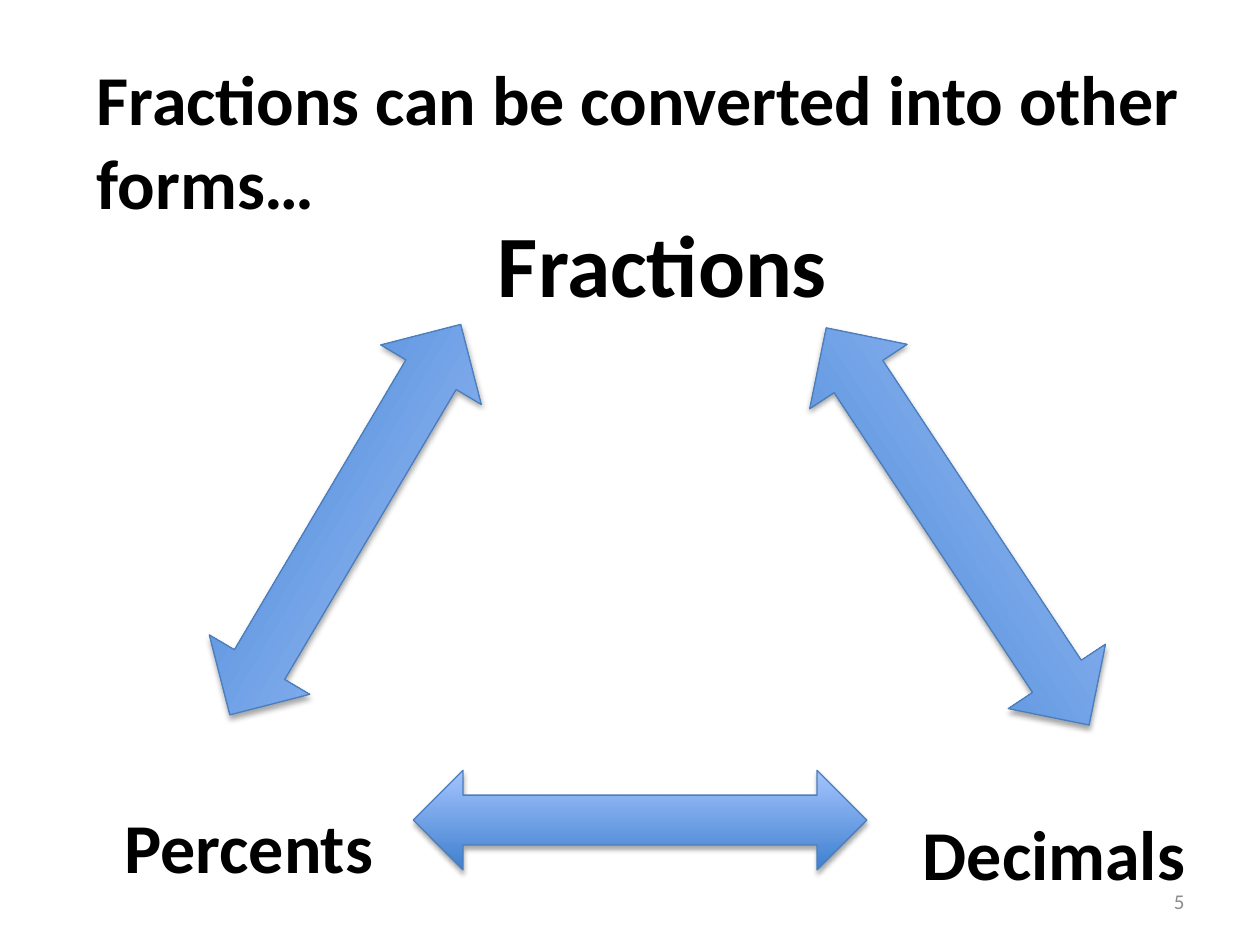
import pptx
import pptx.dml.color
import pptx.enum.shapes
import pptx.enum.text
import pptx.oxml
import pptx.util
from dataclasses import dataclass

ALIGN = pptx.enum.text.PP_ALIGN
ANCHOR = pptx.enum.text.MSO_ANCHOR
A_NS = "http://schemas.openxmlformats.org/drawingml/2006/main"


@dataclass(frozen=True)
class Theme:
    font: str = "Calibri"
    ink: str = "000000"
    muted: str = "8C8C8C"
    arrow_dark: str = "3F80CE"
    arrow_light: str = "A4C4FF"
    arrow_line: str = "4B7EBC"
    top_size: int = 50
    body_size: int = 40
    number_size: int = 12


@dataclass(frozen=True)
class Box:
    """A region measured in grid cells (100 columns by 75 rows)."""
    x: float
    y: float
    w: float
    h: float

    def inner(self, x, y, w, h):
        """A box given as shares of this one."""
        return Box(self.x + x * self.w, self.y + y * self.h, w * self.w, h * self.h)

    def place(self):
        return [pptx.util.Inches(v * CELL) for v in (self.x, self.y, self.w, self.h)]


THEME = Theme()
CELL = 0.1
PAGE = Box(0, 0, 100, 75)


def rgb(value):
    return pptx.dml.color.RGBColor.from_string(value)


def add_text(s, box, text, size=THEME.body_size, color=THEME.ink, bold=True,
             align=ALIGN.LEFT, anchor=ANCHOR.MIDDLE):
    tf = s.shapes.add_textbox(*box.place()).text_frame
    tf.word_wrap = True
    tf.vertical_anchor = anchor
    p = tf.paragraphs[0]
    p.alignment = align
    r = p.add_run()
    r.text = text
    r.font.name = THEME.font
    r.font.size = pptx.util.Pt(size)
    r.font.bold = bold
    r.font.color.rgb = rgb(color)


def add_arrow(s, box, rotation=0):
    sp = s.shapes.add_shape(pptx.enum.shapes.MSO_SHAPE.LEFT_RIGHT_ARROW, *box.place())
    sp.rotation = rotation
    # Dark at the bottom, light at the top
    sp.fill.gradient()
    sp.fill.gradient_angle = 90
    for stop, color in zip(sp.fill.gradient_stops, (THEME.arrow_dark, THEME.arrow_light)):
        stop.color.rgb = rgb(color)
    sp.line.color.rgb = rgb(THEME.arrow_line)
    sp.line.width = pptx.util.Pt(0.75)
    # Soft shadow falling straight down
    sp.shadow.inherit = False
    effects = sp._element.spPr.find(f"{{{A_NS}}}effectLst")
    effects.append(pptx.oxml.parse_xml(
        f'<a:outerShdw xmlns:a="{A_NS}" blurRad="{pptx.util.Pt(3.1)}" '
        f'dist="{pptx.util.Pt(1.8)}" dir="5400000" rotWithShape="0">'
        '<a:srgbClr val="000000"><a:alpha val="35000"/></a:srgbClr></a:outerShdw>'))


def heading(s, box):
    add_text(s, box, "Fractions can be converted into other forms…", anchor=ANCHOR.TOP)


def conversion_triangle(s, box):
    # Corner labels
    add_text(s, box.inner(0.31, 0, 0.4, 0.18), "Fractions",
             size=THEME.top_size, align=ALIGN.CENTER)
    add_text(s, box.inner(0, 0.87, 0.29, 0.14), "Percents", align=ALIGN.CENTER)
    add_text(s, box.inner(0.7, 0.88, 0.31, 0.14), "Decimals", align=ALIGN.CENTER)
    # Arrows along the three sides
    add_arrow(s, box.inner(0.29, 0.83, 0.4, 0.145))
    add_arrow(s, box.inner(0.03, 0.38, 0.4, 0.17), rotation=120.6)
    add_arrow(s, box.inner(0.56, 0.39, 0.42, 0.17), rotation=56.5)


def slide_number(s, box):
    add_text(s, box, "5", size=THEME.number_size, color=THEME.muted,
             bold=False, align=ALIGN.RIGHT)


def main():
    prs = pptx.Presentation()
    prs.slide_width = pptx.util.Inches(PAGE.w * CELL)
    prs.slide_height = pptx.util.Inches(PAGE.h * CELL)
    s = prs.slides.add_slide(prs.slide_layouts[6])
    heading(s, Box(6.7, 3.9, 88.3, 17))
    conversion_triangle(s, Box(6.7, 15.9, 90, 54.5))
    slide_number(s, Box(71.7, 69.5, 23.3, 4))
    prs.save("out.pptx")


if __name__ == "__main__":
    main()
